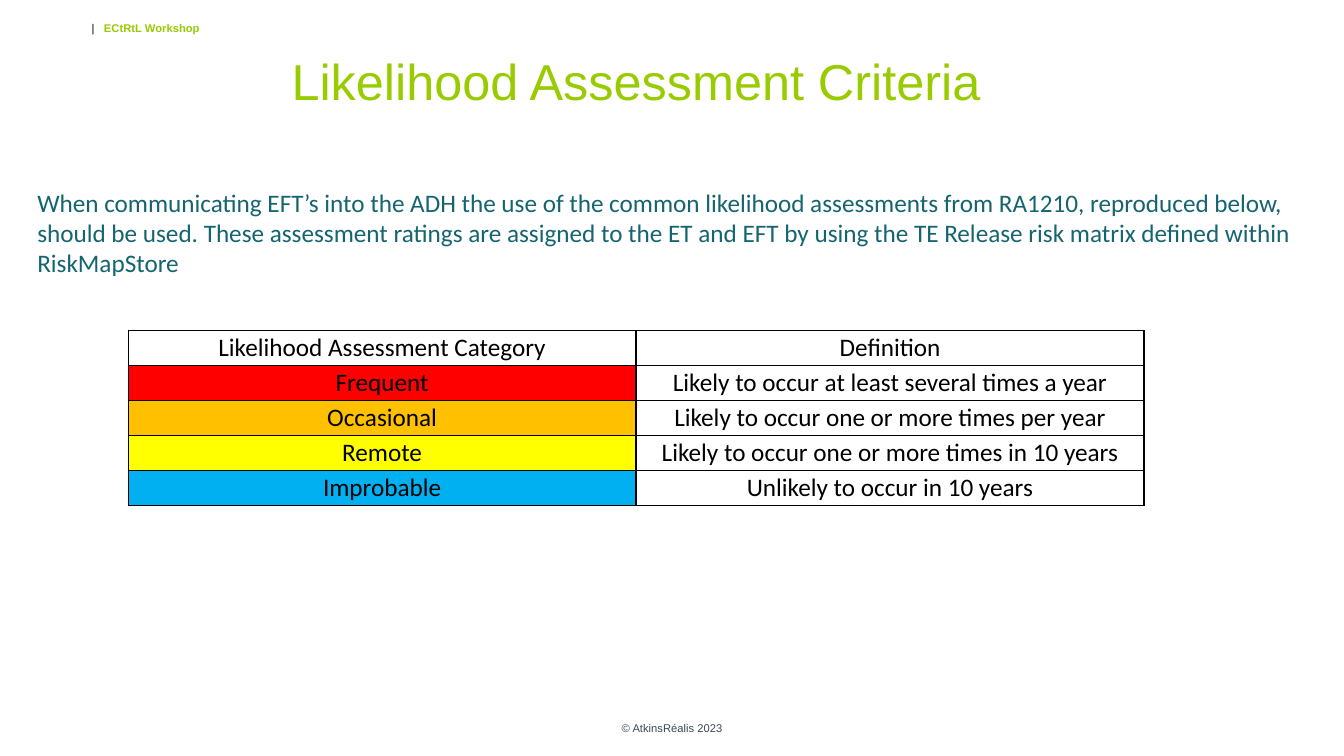
from lxml import etree
from pptx import Presentation
from pptx.dml.color import RGBColor
from pptx.enum.text import MSO_ANCHOR, PP_ALIGN
from pptx.oxml.ns import qn
from pptx.util import Cm, Pt

CENTER = PP_ALIGN.CENTER
LEFT = PP_ALIGN.LEFT
TOP = MSO_ANCHOR.TOP
MIDDLE = MSO_ANCHOR.MIDDLE

BLACK = RGBColor(0x00, 0x00, 0x00)
LIME = RGBColor(0x99, 0xCC, 0x00)
TEAL = RGBColor(0x15, 0x65, 0x70)
SLATE = RGBColor(0x39, 0x4A, 0x58)
RED = RGBColor(0xFF, 0x00, 0x00)
AMBER = RGBColor(0xFF, 0xC0, 0x00)
YELLOW = RGBColor(0xFF, 0xFF, 0x00)
BLUE = RGBColor(0x00, 0xB0, 0xF0)

CRITERIA = [
    ("Likelihood Assessment Category", "Definition", None),
    ("Frequent", "Likely to occur at least several times a year", RED),
    ("Occasional", "Likely to occur one or more times per year", AMBER),
    ("Remote", "Likely to occur one or more times in 10 years", YELLOW),
    ("Improbable", "Unlikely to occur in 10 years", BLUE),
]
GUIDANCE = (
    "When communicating EFT’s into the ADH the use of the common likelihood "
    "assessments from RA1210, reproduced below, should be used. These assessment "
    "ratings are assigned to the ET and EFT by using the TE Release risk matrix "
    "defined within RiskMapStore"
)


def style_font(font, name, size, color, bold=False):
    font.name = name
    font.size = Pt(size)
    font.bold = bold
    font.color.rgb = color


def add_text(slide, box, text, name, size, color, align=LEFT, anchor=TOP):
    frame = slide.shapes.add_textbox(*box).text_frame
    frame.word_wrap = True
    frame.vertical_anchor = anchor
    frame.margin_left = frame.margin_right = 0
    frame.margin_top = frame.margin_bottom = 0
    paragraph = frame.paragraphs[0]
    paragraph.text = text
    paragraph.alignment = align
    for run in paragraph.runs:
        style_font(run.font, name, size, color)
    return paragraph


def add_header(slide, box):
    header = add_text(slide, box, "|\t", "Arial", 8, BLACK)
    tabs = etree.SubElement(header._p.get_or_add_pPr(), qn("a:tabLst"))
    etree.SubElement(tabs, qn("a:tab"), pos=str(Cm(0.31)), algn="l")
    workshop = header.add_run()
    workshop.text = "ECtRtL Workshop"
    style_font(workshop.font, "Arial", 8, LIME, bold=True)


def place_title(slide, box):
    title = slide.shapes.title
    title.left, title.top, title.width, title.height = box
    frame = title.text_frame
    frame.text = "Likelihood Assessment Criteria"
    frame.vertical_anchor = MIDDLE
    paragraph = frame.paragraphs[0]
    paragraph.alignment = CENTER
    style_font(paragraph.runs[0].font, "Arial", 36, LIME)


def add_borders(cell):
    properties = cell._tc.get_or_add_tcPr()
    for side in ("lnL", "lnR", "lnT", "lnB"):
        line = etree.SubElement(properties, qn(f"a:{side}"), w=str(Pt(1)))
        fill = etree.SubElement(line, qn("a:solidFill"))
        etree.SubElement(fill, qn("a:srgbClr"), val=str(BLACK))


def fill_cell(cell, text, color):
    add_borders(cell)
    if color is None:
        cell.fill.background()
    else:
        cell.fill.solid()
        cell.fill.fore_color.rgb = color
    cell.vertical_anchor = MIDDLE
    cell.margin_left = cell.margin_right = Cm(0.18)
    cell.margin_top = cell.margin_bottom = 0
    paragraph = cell.text_frame.paragraphs[0]
    paragraph.text = text
    paragraph.alignment = CENTER
    paragraph.line_spacing = 1.01
    paragraph.space_after = Pt(0.5)
    style_font(paragraph.runs[0].font, "Calibri", 18, BLACK)


def add_criteria_table(slide, box):
    table = slide.shapes.add_table(len(CRITERIA), 2, *box).table
    table.first_row = False
    table.horz_banding = False
    for row, (category, definition, color) in enumerate(CRITERIA):
        fill_cell(table.cell(row, 0), category, color)
        fill_cell(table.cell(row, 1), definition, None)


def build_slide(presentation):
    slide = presentation.slides.add_slide(presentation.slide_layouts[5])
    add_header(slide, (Cm(2.31), Cm(0.53), Cm(26), Cm(0.5)))
    place_title(slide, (Cm(6.25), Cm(1.12), Cm(19.56), Cm(1.8)))
    add_text(slide, (Cm(0.94), Cm(4.72), Cm(32), Cm(2.4)),
             GUIDANCE, "Calibri", 18, TEAL)
    add_criteria_table(slide, (Cm(3.23), Cm(8.33), Cm(25.6), Cm(4.4)))
    add_text(slide, (Cm(11.58), Cm(17.83), Cm(10.72), Cm(1.02)),
             "© AtkinsRéalis 2023", "Arial", 8, SLATE, CENTER, MIDDLE)


def main():
    presentation = Presentation()
    presentation.slide_width = Cm(33.87)
    presentation.slide_height = Cm(19.05)
    build_slide(presentation)
    presentation.save("out.pptx")


if __name__ == "__main__":
    main()
